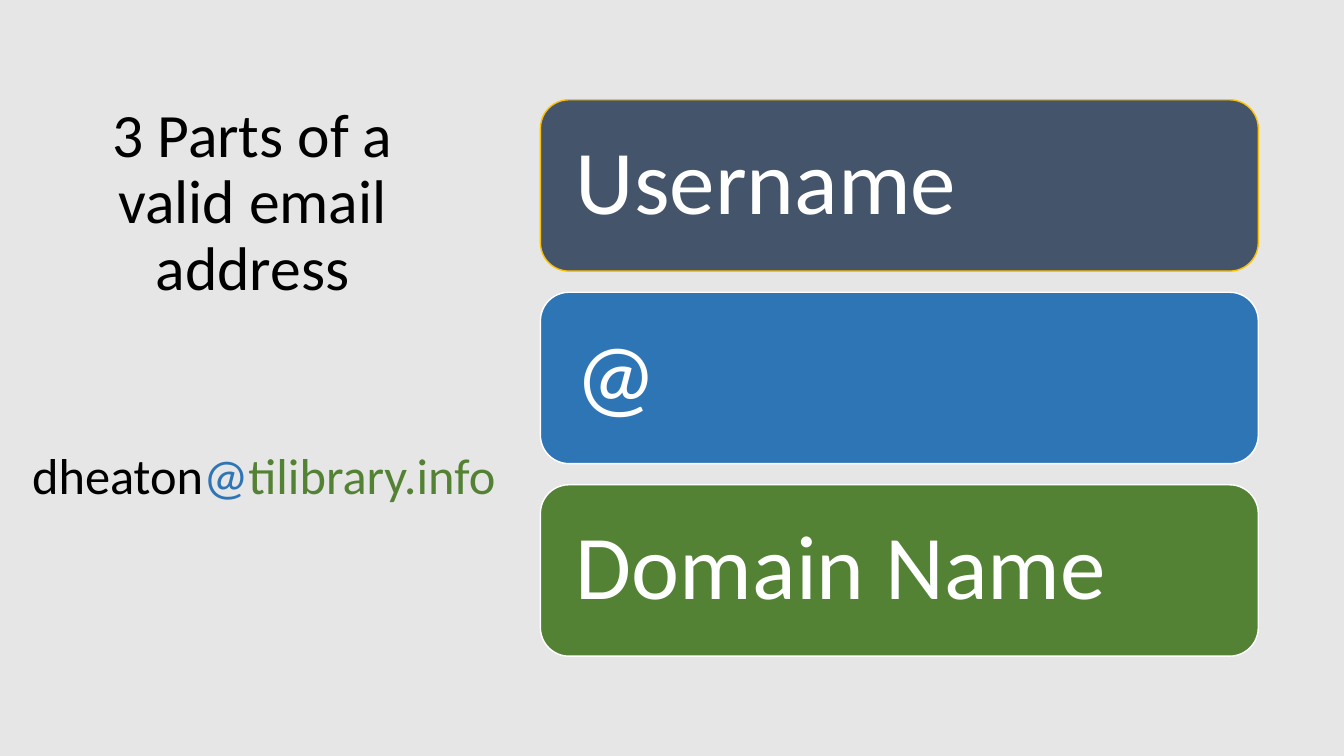
from pptx import Presentation
from pptx.dml.color import RGBColor
from pptx.enum.shapes import MSO_SHAPE
from pptx.enum.text import MSO_ANCHOR, MSO_AUTO_SIZE, PP_ALIGN
from pptx.util import Inches, Pt

ROUNDED = MSO_SHAPE.ROUNDED_RECTANGLE
MIDDLE, TOP = MSO_ANCHOR.MIDDLE, MSO_ANCHOR.TOP
LEFT, CENTER = PP_ALIGN.LEFT, PP_ALIGN.CENTER
GROW = MSO_AUTO_SIZE.SHAPE_TO_FIT_TEXT

COLORS = {
    "background": "E7E6E6", "black": "000000", "white": "FFFFFF",
    "slate": "44546A", "blue": "2E75B6", "green": "548235", "gold": "FFC000",
}


def rgb(name):
    return RGBColor.from_string(COLORS[name])


def write(s, *runs, size, align=LEFT, anchor=MIDDLE, spacing=0.9,
          inset=(0.1, 0.05), wrap=True):
    """Fill a shape with one paragraph of (text, colour) runs."""
    tf = s.text_frame
    tf.word_wrap = wrap
    tf.vertical_anchor = anchor
    tf.margin_left = tf.margin_right = Inches(inset[0])
    tf.margin_top = tf.margin_bottom = Inches(inset[1])
    p = tf.paragraphs[0]
    p.alignment, p.line_spacing = align, spacing
    for text, color in runs:
        r = p.add_run()
        r.text = text
        r.font.name, r.font.size = "Calibri", Pt(size)
        r.font.color.rgb = rgb(color)


prs = Presentation()
prs.slide_width, prs.slide_height = Inches(13.33), Inches(7.5)
slide = prs.slides.add_slide(prs.slide_layouts[6])
slide.background.fill.solid()
slide.background.fill.fore_color.rgb = rgb("background")

# Title
title = slide.shapes.add_textbox(Inches(0.7), Inches(0.7), Inches(3.61), Inches(2.64))
write(title, ("3 Parts of a valid email address", "black"), size=44, align=CENTER)

# Stack of the three parts
BAR_LEFT, BAR_TOP, BAR_WIDTH, BAR_HEIGHT, BAR_STEP = 5.36, 0.99, 7.12, 1.7, 1.91
bars = [("Username", "slate", "gold"), ("@", "blue", "white"),
        ("Domain Name", "green", "white")]
for row, (label, fill, line) in enumerate(bars):
    s = slide.shapes.add_shape(ROUNDED, Inches(BAR_LEFT), Inches(BAR_TOP + row * BAR_STEP),
                               Inches(BAR_WIDTH), Inches(BAR_HEIGHT))
    s.shadow.inherit = False
    s.fill.solid()
    s.fill.fore_color.rgb = rgb(fill)
    s.line.color.rgb = rgb(line)
    s.line.width = Pt(1)
    write(s, (label, "white"), size=65, inset=(0.27, 0.27))

# Example address, coloured by part
address = slide.shapes.add_textbox(Inches(0.22), Inches(4.36), Inches(4.91), Inches(0.71))
write(address, ("dheaton", "black"), ("@", "blue"), ("tilibrary.info", "green"),
      size=36, anchor=TOP, spacing=1.0, wrap=False)
address.text_frame.auto_size = GROW

prs.save("out.pptx")
